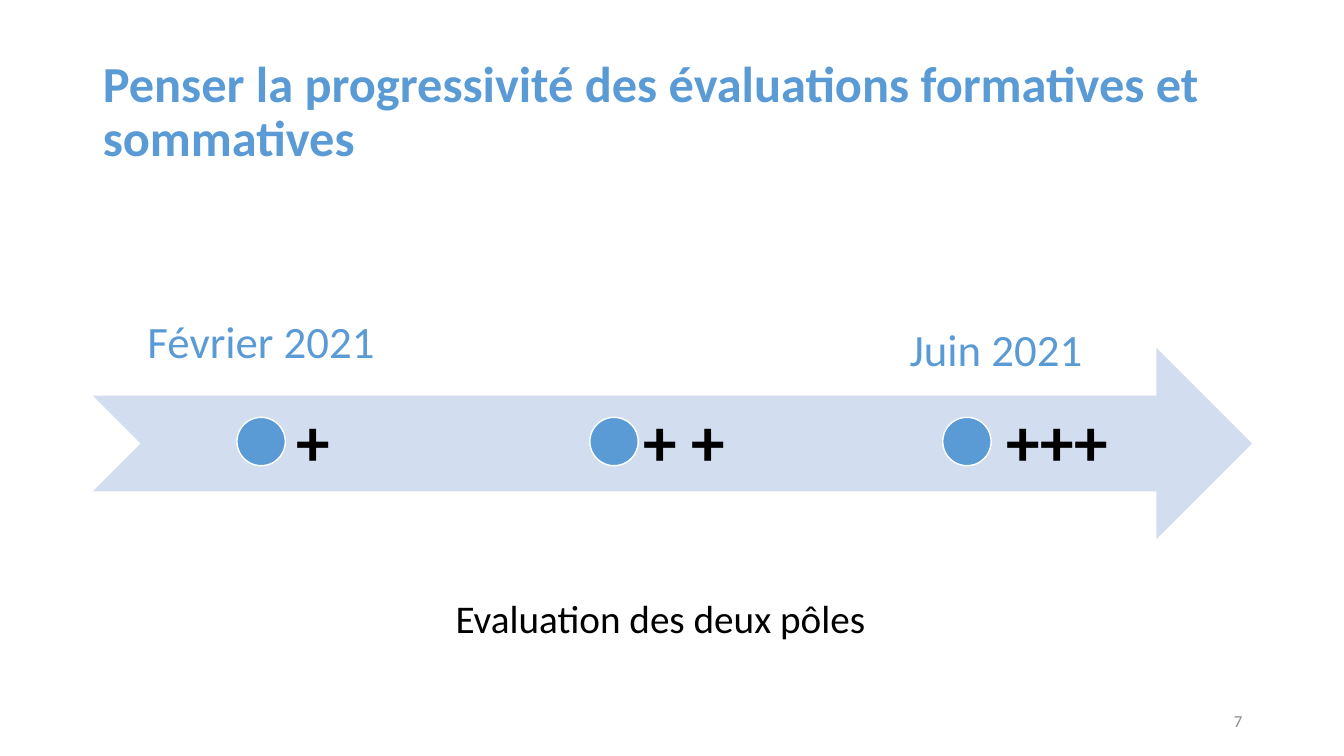
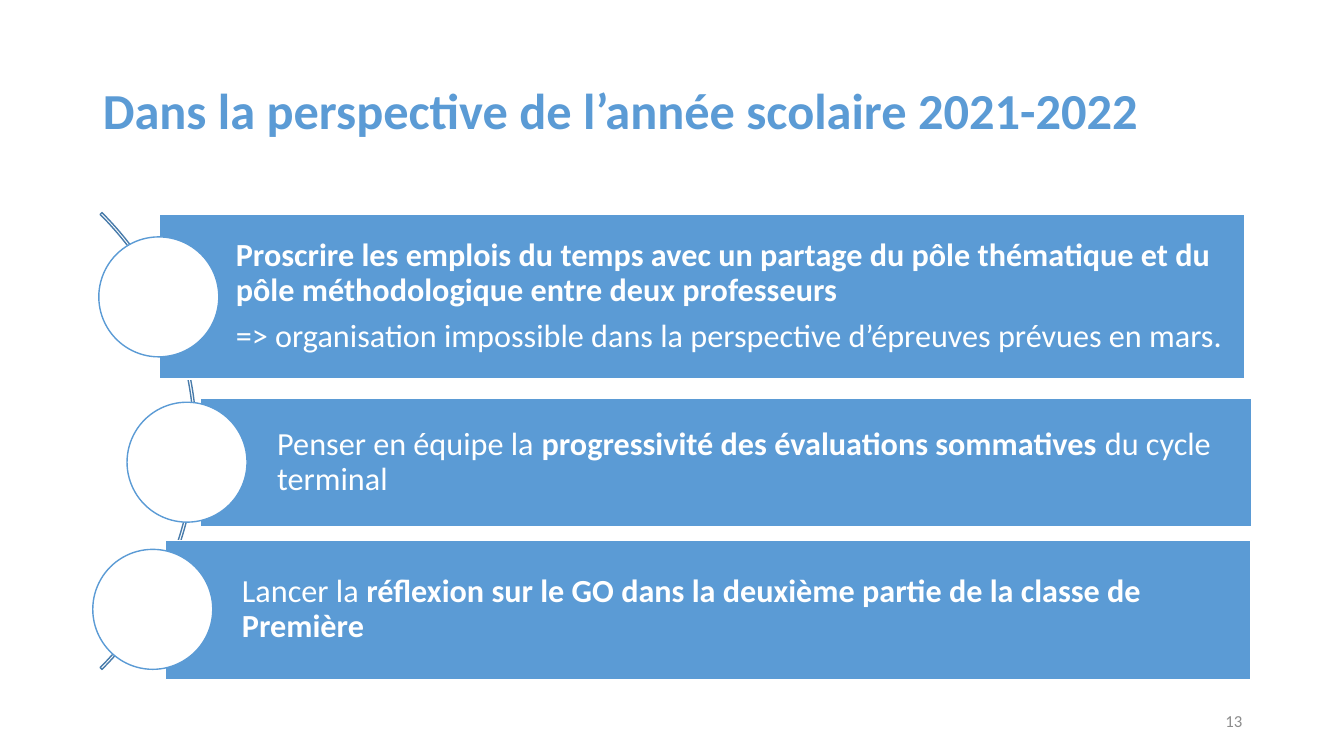
from pptx import Presentation
from pptx.dml.color import RGBColor
from pptx.enum.shapes import MSO_SHAPE as SHAPE
from pptx.enum.text import MSO_ANCHOR as ANCHOR, MSO_AUTO_SIZE as AUTO, PP_ALIGN as ALIGN
from pptx.util import Emu, Pt

EMU_PER_PX = 9144
FONT = "Calibri"
BLUE, PALE, DARK = "5B9BD5", "D2DEEF", "497CAB"
WHITE, BLACK, GREY = "FFFFFF", "000000", "8C8C8C"


def px(*lengths):
    return [Emu(length * EMU_PER_PX) for length in lengths]


def rgb(code):
    return RGBColor.from_string(code)


def set_frame(frame, anchor, insets=(10, 5, 10, 5)):
    frame.word_wrap = True
    frame.auto_size = AUTO.NONE
    frame.vertical_anchor = anchor
    (frame.margin_left, frame.margin_top,
     frame.margin_right, frame.margin_bottom) = px(*insets)


def write(frame, paragraphs, size, color, align=ALIGN.LEFT, spacing=1.0, after=0):
    for index, runs in enumerate(paragraphs):
        paragraph = frame.add_paragraph() if index else frame.paragraphs[0]
        paragraph.alignment = align
        paragraph.line_spacing = spacing
        paragraph.space_before = Pt(0)
        paragraph.space_after = Pt(after)
        for text, bold in runs:
            run = paragraph.add_run()
            run.text = text
            run.font.name = FONT
            run.font.size = Pt(size)
            run.font.bold = bold
            run.font.color.rgb = rgb(color)


def add_label(slide, box, text, size, color, bold=False, anchor=ANCHOR.TOP,
              insets=(10, 5, 10, 5), **style):
    label = slide.shapes.add_textbox(*px(*box))
    set_frame(label.text_frame, anchor, insets)
    write(label.text_frame, [[(text, bold)]], size, color, **style)


def add_figure(slide, kind, box, fill=None, line=None):
    figure = slide.shapes.add_shape(kind, *px(*box))
    figure.shadow.inherit = False
    if fill:
        figure.fill.solid()
        figure.fill.fore_color.rgb = rgb(fill)
    else:
        figure.fill.background()
    if line:
        figure.line.color.rgb = rgb(line)
        figure.line.width = Pt(1)
    else:
        figure.line.fill.background()
    return figure


def add_slide(prs, heading, number):
    slide = prs.slides.add_slide(prs.slide_layouts.get_by_name("Title Only"))
    title = slide.shapes.title
    title.left, title.top, title.width, title.height = px(92, 40, 1150, 145)
    set_frame(title.text_frame, ANCHOR.MIDDLE)
    write(title.text_frame, [[(heading, True)]], 36, BLUE, spacing=0.9)
    add_label(slide, (942, 695, 300, 40), number, 12, GREY,
              anchor=ANCHOR.MIDDLE, align=ALIGN.RIGHT)
    return slide


def add_date(slide, left, top, text):
    add_label(slide, (left, top, 334, 190), text, 32, BLUE, anchor=ANCHOR.BOTTOM,
              insets=(25, 25, 25, 25), align=ALIGN.CENTER, spacing=0.9)


def add_band(slide, box, circle_left, paragraphs):
    band = add_figure(slide, SHAPE.RECTANGLE, box, BLUE, WHITE)
    set_frame(band.text_frame, ANCHOR.MIDDLE, (76, 6, 6, 6))
    write(band.text_frame, paragraphs, 23, WHITE, spacing=0.9, after=8)
    diameter = 119
    circle_top = box[1] + (box[3] - diameter) // 2
    add_figure(slide, SHAPE.OVAL, (circle_left, circle_top, diameter, diameter), WHITE, BLUE)


def build_timeline(prs):
    slide = add_slide(
        prs, "Penser la progressivité des évaluations formatives et sommatives", "7")
    add_figure(slide, SHAPE.NOTCHED_RIGHT_ARROW, (92, 345, 1150, 190), PALE)
    add_date(slide, 92, 200, "Février 2021")
    add_date(slide, 821, 208, "Juin 2021")
    levels = [(284, 62, "+"), (628, 110, "+ +"), (988, 139, "+++")]
    for step, (left, width, level) in enumerate(levels):
        add_figure(slide, SHAPE.OVAL, (235 + 350 * step, 414, 48, 48), BLUE, WHITE)
        add_label(slide, (left, 391, width, 91), level, 48, BLACK, bold=True)
    add_label(slide, (442, 585, 514, 57), "Evaluation des deux pôles", 28, BLACK)


def build_outlook(prs):
    slide = add_slide(prs, "Dans la perspective de l’année scolaire 2021-2022", "13")
    arc = add_figure(slide, SHAPE.BLOCK_ARC, (-446, 117, 641, 641), line=DARK)
    for index, value in enumerate((189, 27, 1 / 250)):
        arc.adjustments[index] = value
    bands = [
        ((158, 213, 1077, 163), 98, [
            [("Proscrire les emplois du temps avec un partage du pôle thématique et du "
              "pôle méthodologique entre deux professeurs", True)],
            [("=> organisation impossible dans la perspective d’épreuves prévues en mars.",
              False)]]),
        ((199, 395, 1043, 128), 126, [
            [("Penser en équipe la ", False),
             ("progressivité des évaluations sommatives ", True),
             ("du cycle terminal", False)]]),
        ((164, 536, 1077, 138), 92, [
            [("Lancer la ", False),
             ("réflexion sur le GO dans la deuxième partie de la classe de Première", True)]]),
    ]
    for box, circle_left, paragraphs in bands:
        add_band(slide, box, circle_left, paragraphs)


def main():
    prs = Presentation()
    prs.slide_width, prs.slide_height = px(1333, 750)
    build_timeline(prs)
    build_outlook(prs)
    prs.save("out.pptx")


if __name__ == "__main__":
    main()
